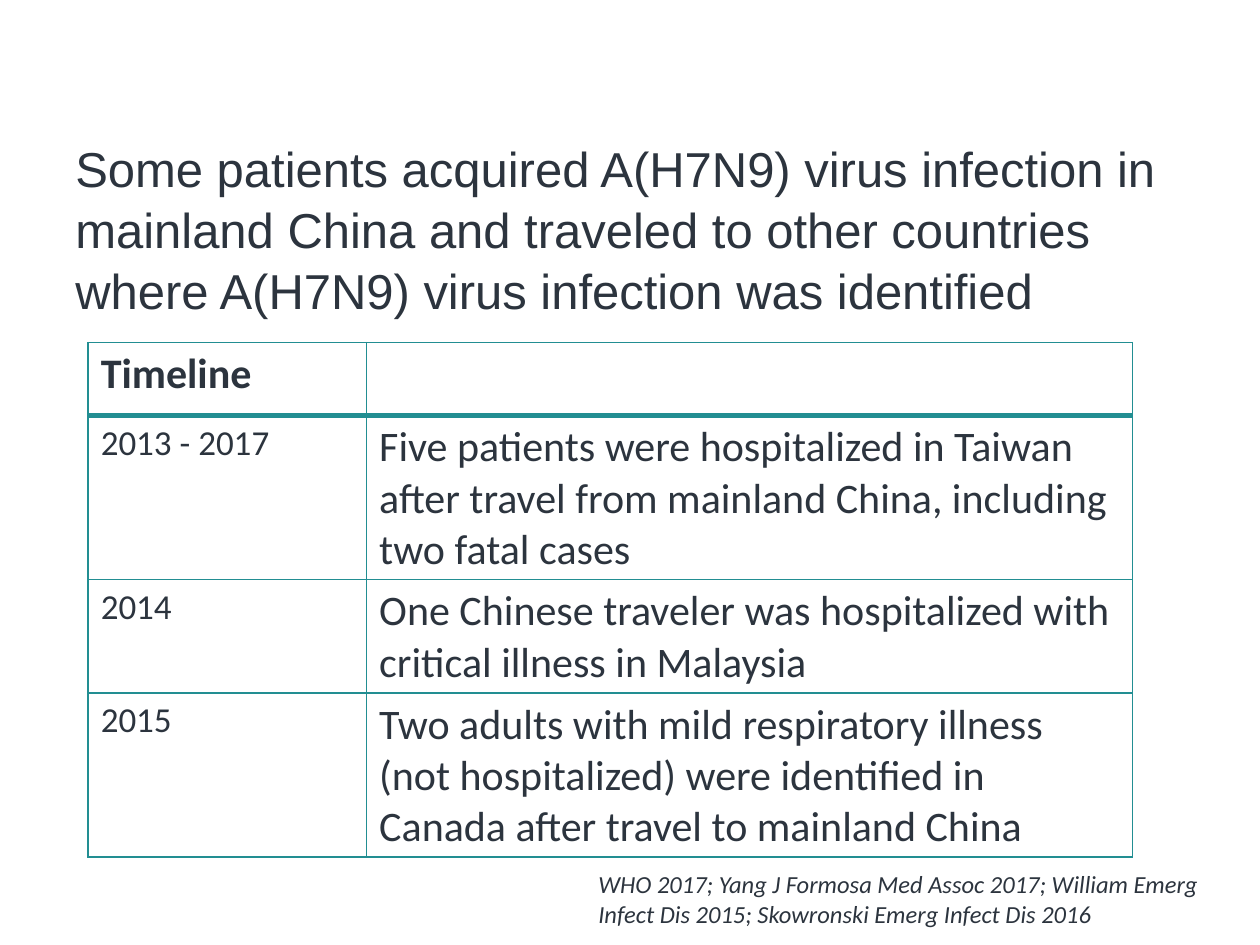
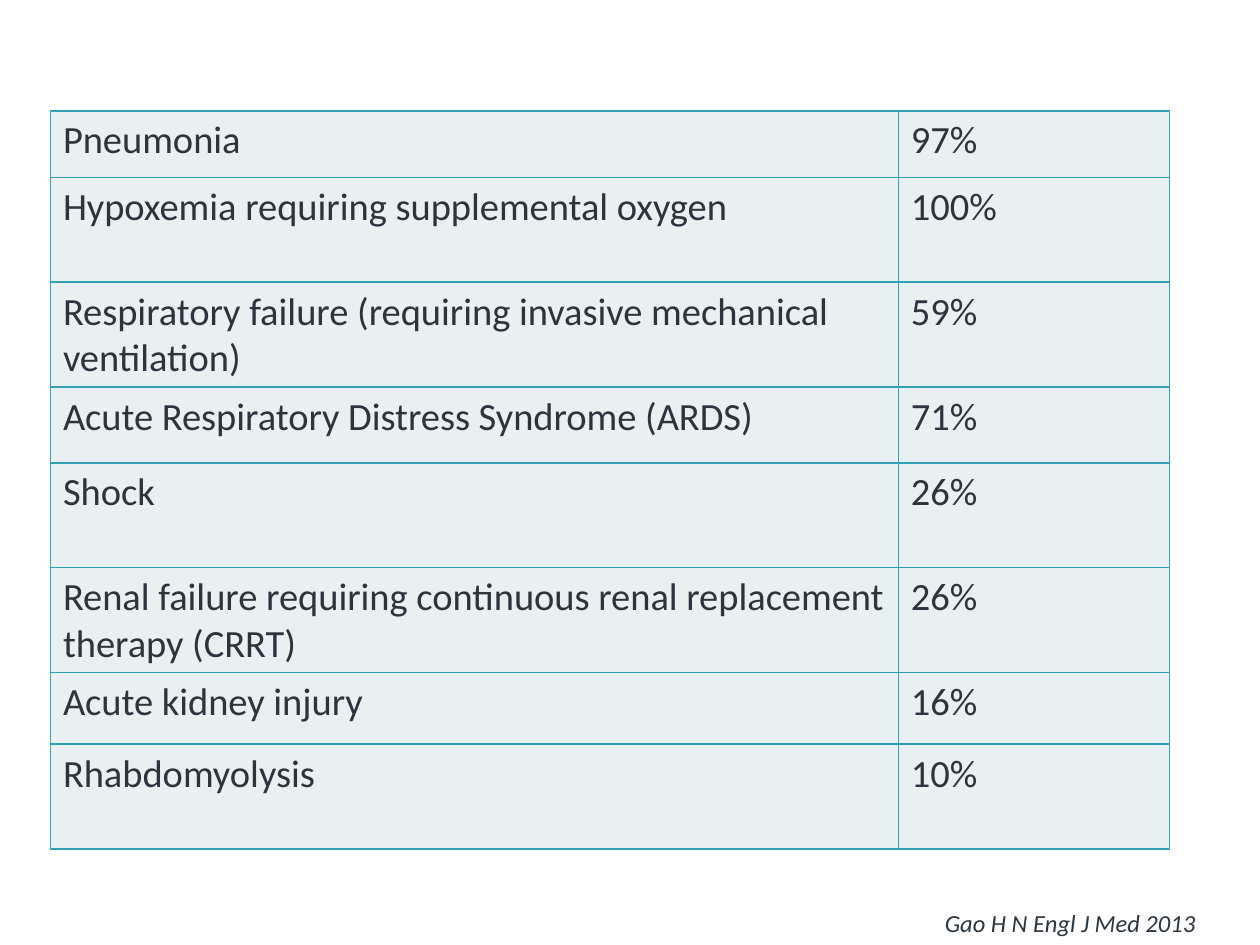
from dataclasses import dataclass

from lxml import etree
from pptx import Presentation
from pptx.dml.color import RGBColor
from pptx.oxml.ns import qn
from pptx.util import Emu, Pt

EMU_PER_PX = 9144  # 100 px to the inch
COLORS = {"text": "2C343E", "teal": "228E92", "cyan": "31A1B3", "pale": "E8F0F2"}
HEADING_FONT = "Arial"
BODY_FONT = "Calibri"
BORDER_SIDES = ("a:lnL", "a:lnR", "a:lnT", "a:lnB")


@dataclass(frozen=True)
class Area:
    left: int
    top: int
    width: int
    height: int

    def emu(self) -> tuple[Emu, ...]:
        return tuple(px(n) for n in (self.left, self.top, self.width, self.height))


@dataclass(frozen=True)
class TableStyle:
    border: str
    sizes: tuple[int, int]
    fill: str | None = None
    header_size: int | None = None


TIMELINE_STYLE = TableStyle("teal", (20, 24), header_size=24)
TIMELINE = [
    (58, "Timeline", ""),
    (130, "2013 - 2017", "Five patients were hospitalized in Taiwan after travel "
                         "from mainland China, including two fatal cases"),
    (90, "2014", "One Chinese traveler was hospitalized with critical illness in Malaysia"),
    (130, "2015", "Two adults with mild respiratory illness (not hospitalized) were "
                  "identified in Canada after travel to mainland China"),
]

COMPLICATION_STYLE = TableStyle("cyan", (22, 22), fill="pale")
COMPLICATIONS = [
    (53, "Pneumonia", "97%"),
    (83, "Hypoxemia requiring supplemental oxygen", "100%"),
    (83, "Respiratory failure (requiring invasive mechanical ventilation)", "59%"),
    (60, "Acute Respiratory Distress Syndrome (ARDS)", "71%"),
    (83, "Shock", "26%"),
    (83, "Renal failure requiring continuous renal replacement therapy (CRRT)", "26%"),
    (57, "Acute kidney injury", "16%"),
    (83, "Rhabdomyolysis", "10%"),
]


def px(length: int) -> Emu:
    return Emu(length * EMU_PER_PX)


def write(frame, text: str, *, size: int, font: str = BODY_FONT, bold: bool = False,
          italic: bool = False, line_spacing: float | None = None) -> None:
    """Fill a text frame, one paragraph for each line of text."""
    for index, line in enumerate(text.split("\n")):
        para = frame.add_paragraph() if index else frame.paragraphs[0]
        para.line_spacing = line_spacing
        para.font.size = Pt(size)
        if not line:
            continue
        span = para.add_run()
        span.text = line
        span.font.name = font
        span.font.size = Pt(size)
        span.font.bold = bold
        span.font.italic = italic
        span.font.color.rgb = RGBColor.from_string(COLORS["text"])


def add_text(page, area: Area, text: str, **style) -> None:
    box = page.shapes.add_textbox(*area.emu())
    box.text_frame.word_wrap = True
    write(box.text_frame, text, **style)


def add_citation(page, area: Area, text: str) -> None:
    add_text(page, area, text, size=14, italic=True)


def set_borders(cell, color: str, widths: dict[str, int]) -> None:
    """Draw the four cell borders; widths are in points by side."""
    properties = cell._tc.get_or_add_tcPr()
    for side in BORDER_SIDES:
        line = etree.SubElement(properties, qn(side), w=str(Pt(widths.get(side, 1))))
        fill = etree.SubElement(line, qn("a:solidFill"))
        etree.SubElement(fill, qn("a:srgbClr"), val=COLORS[color])


def add_grid(page, left: int, top: int, columns: tuple[int, int],
             rows: list[tuple[int, str, str]], style: TableStyle) -> None:
    area = Area(left, top, sum(columns), sum(row[0] for row in rows))
    table = page.shapes.add_table(len(rows), len(columns), *area.emu()).table
    table.first_row = False
    table.horz_banding = False
    for column, width in zip(table.columns, columns):
        column.width = px(width)
    for row_index, (height, *texts) in enumerate(rows):
        table.rows[row_index].height = px(height)
        is_header = style.header_size is not None and row_index == 0
        below_header = style.header_size is not None and row_index == 1
        widths = {"a:lnB": 3} if is_header else {"a:lnT": 3} if below_header else {}
        for column_index, text in enumerate(texts):
            cell = table.cell(row_index, column_index)
            set_borders(cell, style.border, widths)
            if style.fill:
                cell.fill.solid()
                cell.fill.fore_color.rgb = RGBColor.from_string(COLORS[style.fill])
            else:
                cell.fill.background()
            size = style.header_size if is_header else style.sizes[column_index]
            write(cell.text_frame, text, size=size, bold=is_header)


def build_travel_page(page) -> None:
    add_text(page, Area(50, 103, 914, 160),
             "Some patients acquired A(H7N9) virus infection in mainland China and "
             "traveled to other countries where A(H7N9) virus infection was identified",
             size=28, font=HEADING_FONT, line_spacing=1.04)
    add_citation(page, Area(465, 685, 499, 57),
                 "WHO 2017; Yang J Formosa Med Assoc 2017; William Emerg\n"
                 "Infect Dis 2015; Skowronski Emerg Infect Dis 2016")
    add_grid(page, 70, 272, (221, 608), TIMELINE, TIMELINE_STYLE)


def build_complications_page(page) -> None:
    add_citation(page, Area(740, 716, 260, 34), "Gao H N Engl J Med 2013")
    add_grid(page, 40, 88, (673, 215), COMPLICATIONS, COMPLICATION_STYLE)


def main() -> None:
    deck = Presentation()
    deck.slide_width, deck.slide_height = px(1000), px(750)
    blank = deck.slide_layouts[6]
    for build_page in (build_travel_page, build_complications_page):
        build_page(deck.slides.add_slide(blank))
    deck.save("out.pptx")


if __name__ == "__main__":
    main()
